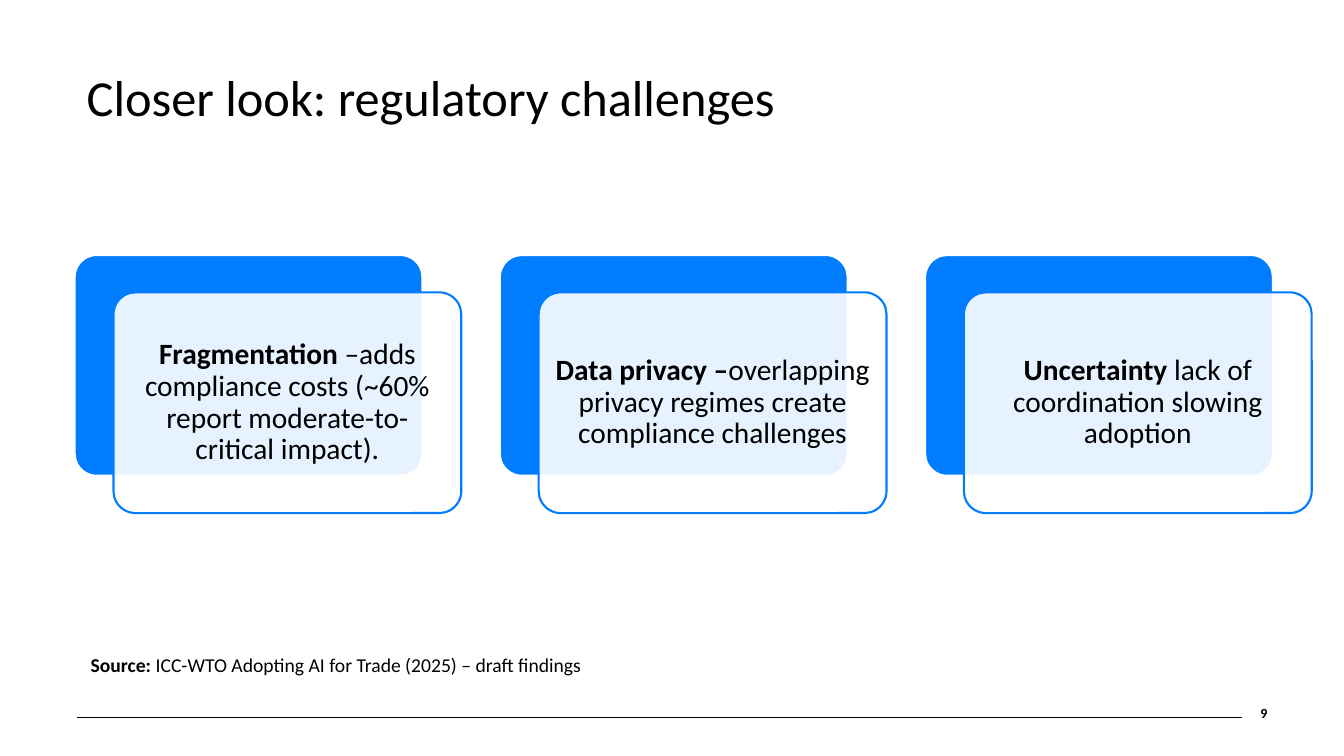
from lxml.etree import SubElement
from pptx import Presentation
from pptx.dml.color import RGBColor
from pptx.enum.shapes import MSO_CONNECTOR, MSO_SHAPE
from pptx.enum.text import MSO_ANCHOR, PP_ALIGN
from pptx.oxml.ns import qn
from pptx.util import Inches, Pt

BLACK = RGBColor(0x00, 0x00, 0x00)
WHITE = RGBColor(0xFF, 0xFF, 0xFF)
BLUE = RGBColor(0x00, 0x7D, 0xFF)
FONT = "Calibri"

SLIDE_WIDTH, SLIDE_HEIGHT = 13.33, 7.5
CARDS_BOX = (0.74, 2.53, 12.27, 2.56)
CARD_WIDTH, CARD_HEIGHT = 3.45, 2.19
CHALLENGES = [
    ("Fragmentation", " –adds compliance costs (~60% report moderate-to-critical impact)."),
    ("Data privacy –", "overlapping privacy regimes create compliance challenges"),
    ("Uncertainty ", "lack of coordination slowing adoption"),
]


def write_runs(text_frame, runs, size, align=PP_ALIGN.LEFT, anchor=MSO_ANCHOR.MIDDLE, spacing=0.9):
    text_frame.word_wrap = True
    text_frame.vertical_anchor = anchor
    paragraph = text_frame.paragraphs[0]
    paragraph.alignment = align
    paragraph.line_spacing = spacing
    for text, bold in runs:
        run = paragraph.add_run()
        run.text = text
        run.font.name = FONT
        run.font.size = Pt(size)
        run.font.bold = bold
        run.font.color.rgb = BLACK


def add_panel(slide, left, top, fill, line, opacity=100):
    panel = slide.shapes.add_shape(
        MSO_SHAPE.ROUNDED_RECTANGLE,
        Inches(left), Inches(top), Inches(CARD_WIDTH), Inches(CARD_HEIGHT))
    panel.adjustments[0] = 0.1
    panel.shadow.inherit = False
    panel.fill.solid()
    panel.fill.fore_color.rgb = fill
    if opacity < 100:
        color = panel.fill._xPr.find(qn("a:solidFill"))[0]
        SubElement(color, qn("a:alpha")).set("val", str(opacity * 1000))
    panel.line.color.rgb = line
    panel.line.width = Pt(1.5)
    return panel


def add_cards(slide, box, challenges):
    left, top, width, height = box
    shift_x = 0.385
    shift_y = height - CARD_HEIGHT
    pitch = (width - CARD_WIDTH - shift_x) / (len(challenges) - 1)
    for index, (heading, detail) in enumerate(challenges):
        card_left = left + index * pitch
        add_panel(slide, card_left, top, BLUE, WHITE)
        front = add_panel(slide, card_left + shift_x, top + shift_y, WHITE, BLUE, 90)
        frame = front.text_frame
        frame.margin_left = frame.margin_right = Inches(0.09)
        frame.margin_top = frame.margin_bottom = Inches(0.09)
        write_runs(frame, [(heading, True), (detail, False)], 21, PP_ALIGN.CENTER)


def add_title(slide, box, text):
    title = slide.shapes.title
    title.left, title.top, title.width, title.height = map(Inches, box)
    write_runs(title.text_frame, [(text, False)], 36)


def add_source(slide, box):
    source = slide.shapes.add_textbox(*map(Inches, box))
    runs = [("Source:", True), (" ICC-WTO Adopting AI for Trade (2025) – draft findings", False)]
    write_runs(source.text_frame, runs, 14, anchor=MSO_ANCHOR.TOP, spacing=1.0)


def add_footer(slide, box, number):
    left, top, width, height = box
    number_width = 0.56
    rule_y = Inches(top + 0.16)
    rule = slide.shapes.add_connector(
        MSO_CONNECTOR.STRAIGHT, Inches(left), rule_y, Inches(left + 11.56), rule_y)
    rule.line.color.rgb = BLACK
    rule.line.width = Pt(0.75)
    SubElement(rule._element.spPr, qn("a:effectLst"))
    page = slide.shapes.add_textbox(
        Inches(left + width - number_width), Inches(top), Inches(number_width), Inches(height))
    write_runs(page.text_frame, [(number, True)], 10, PP_ALIGN.RIGHT)


def main():
    presentation = Presentation()
    presentation.slide_width = Inches(SLIDE_WIDTH)
    presentation.slide_height = Inches(SLIDE_HEIGHT)
    slide = presentation.slides.add_slide(presentation.slide_layouts[5])
    add_title(slide, (0.76, 0.67, 11.83, 0.65), "Closer look: regulatory challenges")
    add_cards(slide, CARDS_BOX, CHALLENGES)
    add_source(slide, (0.8, 6.43, 9.87, 0.34))
    add_footer(slide, (0.76, 6.96, 11.91, 0.25), "9")
    presentation.save("out.pptx")


if __name__ == "__main__":
    main()
